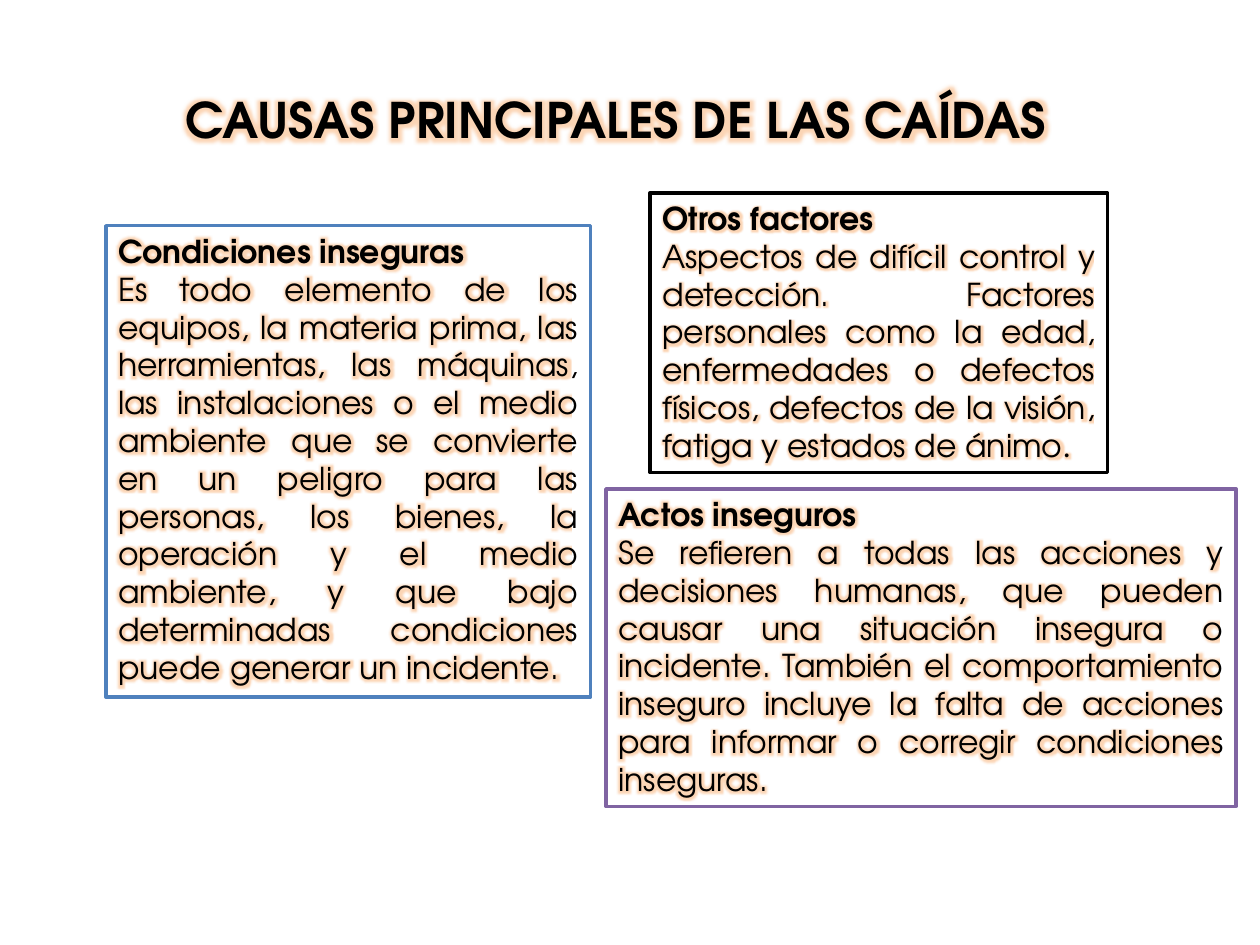
import pptx
import pptx.util
import pptx.dml.color
import pptx.enum.shapes
import pptx.enum.text
import pptx.oxml
import pptx.oxml.ns

Pt = pptx.util.Pt
FACE = "TeX Gyre Adventor"
GLOW = (
    '<a:effectLst %s><a:glow rad="101600"><a:srgbClr val="F79646">'
    '<a:alpha val="40000"/></a:srgbClr></a:glow></a:effectLst>'
    % pptx.oxml.ns.nsdecls("a")
)


def color(code):
    return pptx.dml.color.RGBColor.from_string(code)


class Deck:
    def __init__(self, wide, high):
        self.file = pptx.Presentation()
        self.file.slide_width = Pt(wide)
        self.file.slide_height = Pt(high)
        self.slide = self.file.slides.add_slide(self.file.slide_layouts[5])

    def prose(self, para, runs, size, bold):
        for text, face in runs:
            run = para.add_run()
            run.text = text
            if face != FACE:
                run.font.name = face
            run._r.get_or_add_rPr().insert(0, pptx.oxml.parse_xml(GLOW))
        para.alignment = pptx.enum.text.PP_ALIGN.JUSTIFY
        font = para.font
        font.name = FACE
        font.size = Pt(size)
        font.bold = bold
        font.color.rgb = color("000000")

    def frame(self, shape):
        frame = shape.text_frame
        frame.word_wrap = True
        frame.auto_size = pptx.enum.text.MSO_AUTO_SIZE.SHAPE_TO_FIT_TEXT
        frame.vertical_anchor = pptx.enum.text.MSO_ANCHOR.TOP
        return frame

    def title(self, area, text):
        shape = self.slide.shapes.title
        shape.left, shape.top, shape.width, shape.height = map(Pt, area)
        self.prose(self.frame(shape).paragraphs[0], [(text, FACE)], 28, True)

    def box(self, area, line, head, body):
        shape = self.slide.shapes.add_shape(
            pptx.enum.shapes.MSO_SHAPE.RECTANGLE, *map(Pt, area)
        )
        shape.shadow.inherit = False
        shape.fill.solid()
        shape.fill.fore_color.rgb = color("FFFFFF")
        shape.line.color.rgb = color(line)
        shape.line.width = Pt(2)
        frame = self.frame(shape)
        self.prose(frame.paragraphs[0], [(head, FACE)], 18, True)
        self.prose(frame.add_paragraph(), body, 18, False)


def main():
    deck = Deck(720, 540)
    deck.title((98.6, 47.5, 546.5, 41), "CAUSAS PRINCIPALES DE LAS CAÍDAS ")
    deck.box(
        (60.5, 129, 277, 269.3), "4F81BD", "Condiciones inseguras ",
        [("Es todo elemento de los equipos, la materia prima, las "
          "herramientas, las máquinas, las instalaciones o el medio ambiente "
          "que se convierte en un peligro para las personas, los bienes, la "
          "operación y el medio ambiente, y que bajo determinadas condiciones "
          "puede generar un incidente. ", FACE)],
    )
    deck.box(
        (346.3, 279.4, 360, 181.4), "8064A2", "Actos inseguros ",
        [("Se refieren a todas las acciones y decisiones humanas, que pueden "
          "causar una situación insegura o incidente. También el "
          "comportamiento inseguro incluye la falta de acciones para informar "
          "o corregir condiciones inseguras. ", FACE)],
    )
    deck.box(
        (371.5, 110.2, 261.4, 159.8), "000000", "Otros factores ",
        [("Aspectos de difícil control y detección. Factores personales como "
          "la edad, enfermedades o defectos físicos, defectos de la visión, "
          "fatiga y estados de ánimo", FACE), (". ", "Calibri")],
    )
    deck.file.save("out.pptx")


if __name__ == "__main__":
    main()
